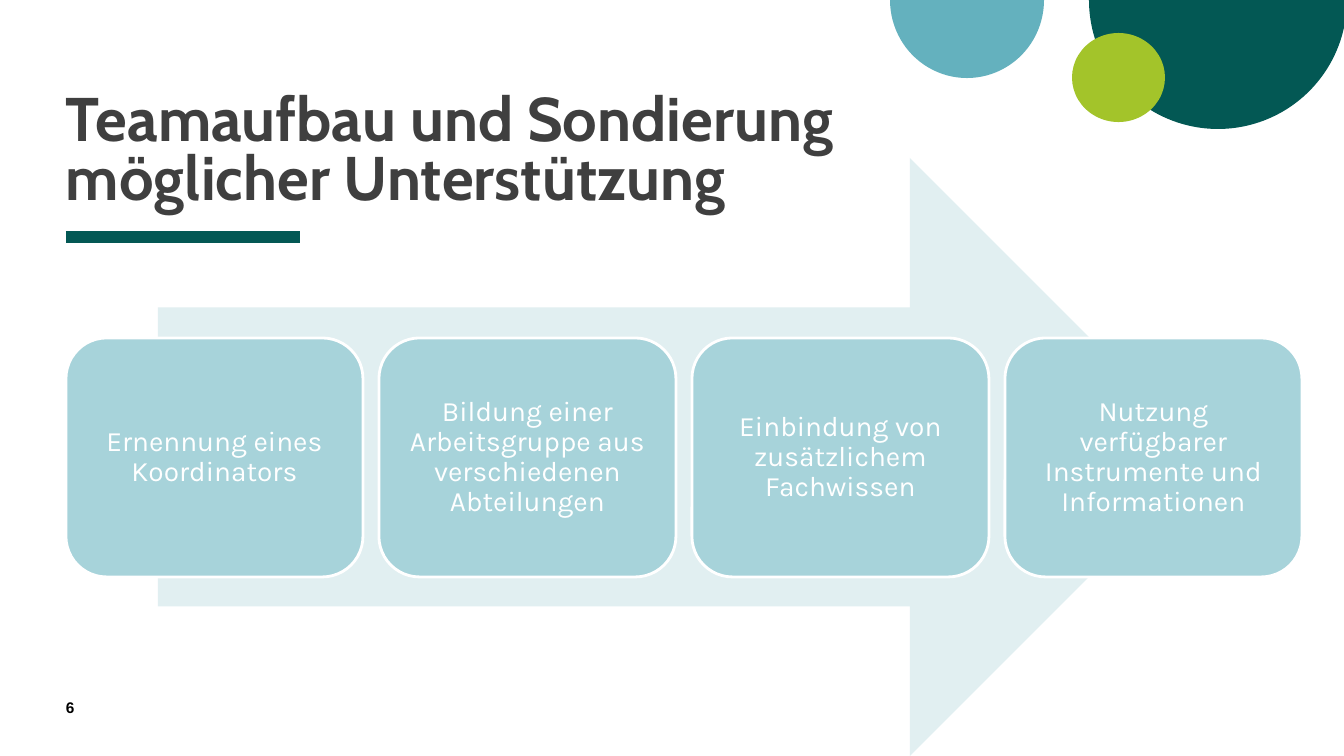
import pptx
import pptx.util
import pptx.dml.color
import pptx.enum.shapes
import pptx.enum.text
import pptx.oxml

SHAPE = pptx.enum.shapes.MSO_SHAPE
ALIGN = pptx.enum.text.PP_ALIGN
ANCHOR = pptx.enum.text.MSO_ANCHOR
PX = 914400 / 100.8
COLORS = {
    "forest": "035854",
    "teal": "64B1BE",
    "lime": "A3C42A",
    "arrow": "E1EFF1",
    "card": "A7D3DA",
    "title": "3F3F3F",
    "white": "FFFFFF",
    "black": "000000",
}
COLORS = {name: pptx.dml.color.RGBColor.from_string(value) for name, value in COLORS.items()}

deck = pptx.Presentation()
deck.slide_width = round(1344 * PX)
deck.slide_height = round(756 * PX)
slide = deck.slides.add_slide(deck.slide_layouts[6])


def add_filled(kind, box, color, adjustments=()):
    shape = slide.shapes.add_shape(kind, *[round(v * PX) for v in box])
    shape.shadow.inherit = False
    shape.fill.solid()
    shape.fill.fore_color.rgb = COLORS[color]
    shape.line.fill.background()
    for index, value in enumerate(adjustments):
        shape.adjustments[index] = value
    return shape


def write(shape, text, font, size, color, bold=False, inset=0, bottom=0,
          anchor=ANCHOR.TOP, align=ALIGN.LEFT, spacing=1.0):
    frame = shape.text_frame
    frame.word_wrap = True
    frame.vertical_anchor = anchor
    frame.margin_left = frame.margin_right = frame.margin_top = round(inset * PX)
    frame.margin_bottom = round((inset + bottom) * PX)
    paragraph = frame.paragraphs[0]
    paragraph.alignment = align
    paragraph.line_spacing = spacing
    run = paragraph.add_run()
    run.text = text
    run.font.name = font
    run.font.size = pptx.util.Pt(size)
    run.font.bold = bold
    run.font.color.rgb = COLORS[color]


# Corner circles: the two pies show their lower half, 0 to 180 degrees
add_filled(SHAPE.PIE, (1089, -129, 258, 258), "forest", (0, 108))
add_filled(SHAPE.PIE, (890, -78, 154, 156), "teal", (0, 108))
add_filled(SHAPE.OVAL, (1072, 33, 93, 89), "lime")

# Title and its rule
rule = slide.shapes.add_connector(
    pptx.enum.shapes.MSO_CONNECTOR.STRAIGHT,
    *[round(v * PX) for v in (66, 237, 300, 237)])
rule.line.color.rgb = COLORS["forest"]
rule.line.width = pptx.util.Pt(8)
rule_properties = rule.line._get_or_add_ln().getparent()
rule_properties.append(pptx.oxml.parse_xml(
    '<a:effectLst xmlns:a="http://schemas.openxmlformats.org/drawingml/2006/main"/>'))

title = slide.shapes.add_textbox(*[round(v * PX) for v in (66, 75, 879, 207)])
write(title, "Teamaufbau und Sondierung möglicher Unterstützung", "Cabin", 44, "title",
      bold=True, bottom=70, anchor=ANCHOR.BOTTOM, spacing=0.8)

# Slide number
page_number = slide.shapes.add_textbox(*[round(v * PX) for v in (66, 698, 57, 27)])
write(page_number, "6", "Arial", 11, "black", bold=True)

# Process arrow with four steps
add_filled(SHAPE.RIGHT_ARROW, (158, 158, 1051, 598), "arrow", (0.5, 0.5))
steps = [
    "Ernennung eines Koordinators",
    "Bildung einer Arbeitsgruppe aus verschiedenen Abteilungen",
    "Einbindung von zusätzlichem Fachwissen",
    "Nutzung verfügbarer Instrumente und Informationen",
]
for index, step in enumerate(steps):
    card = add_filled(SHAPE.ROUNDED_RECTANGLE, (66 + 313 * index, 338, 297, 239),
                      "card", (0.17,))
    card.line.color.rgb = COLORS["white"]
    card.line.width = pptx.util.Pt(2)
    write(card, step, "Karla", 20, "white", inset=11,
          anchor=ANCHOR.MIDDLE, align=ALIGN.CENTER, spacing=0.9)

deck.save("out.pptx")
